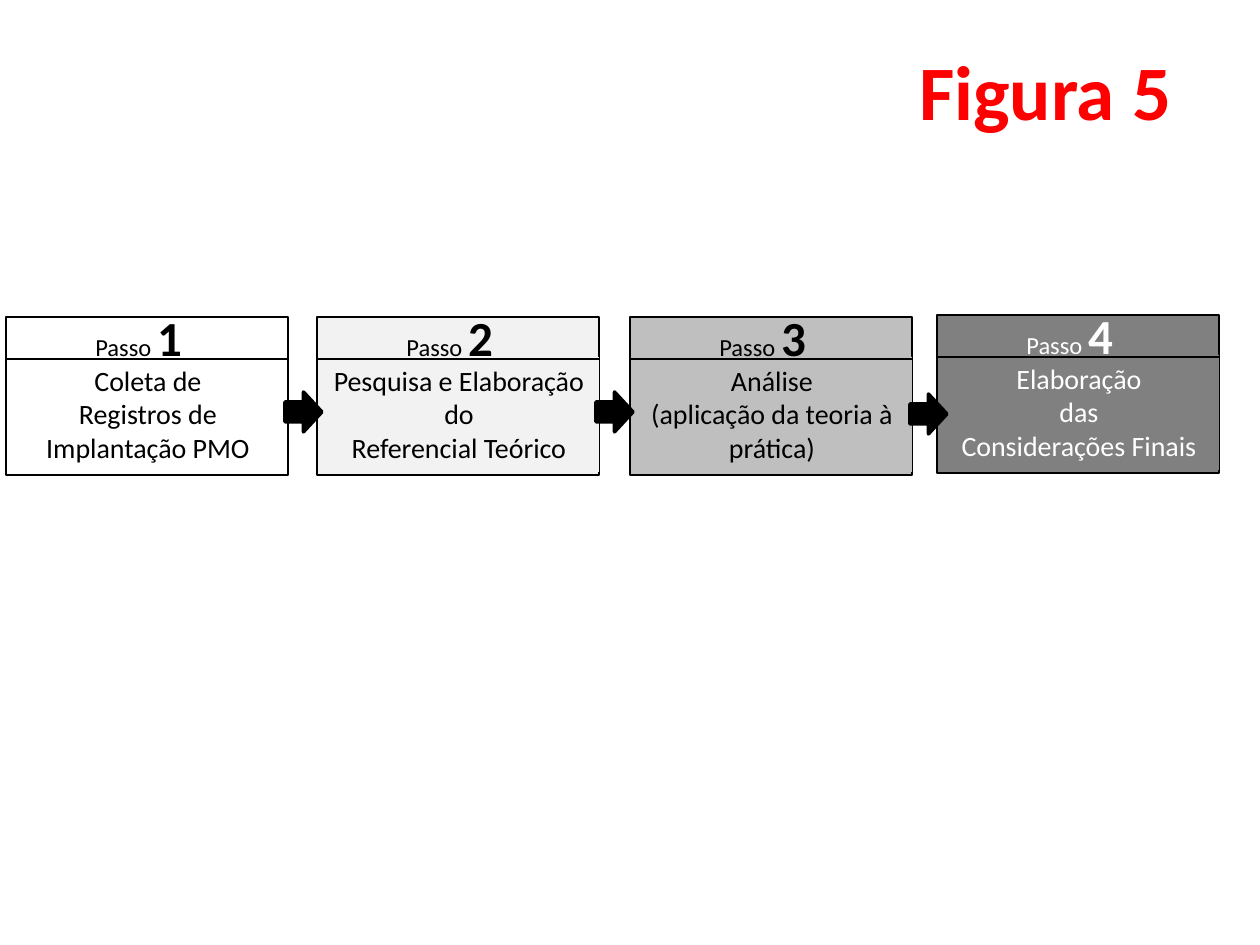
from dataclasses import dataclass
from typing import Optional

from lxml.etree import SubElement
from pptx import Presentation
from pptx.dml.color import RGBColor
from pptx.enum.shapes import MSO_CONNECTOR as Link, MSO_SHAPE as Kind
from pptx.enum.text import MSO_ANCHOR as Anchor, MSO_AUTO_SIZE as Fit, PP_ALIGN as Align
from pptx.oxml.ns import qn
from pptx.util import Emu, Pt

SCALE = 914400 / 126

BLACK = RGBColor(0x00, 0x00, 0x00)
WHITE = RGBColor(0xFF, 0xFF, 0xFF)
RED = RGBColor(0xFF, 0x00, 0x00)
PALE = RGBColor(0xF2, 0xF2, 0xF2)
SILVER = RGBColor(0xBF, 0xBF, 0xBF)
GRAY = RGBColor(0x80, 0x80, 0x80)


@dataclass
class Step:
    left: int
    top: int
    lines: list[str]
    fill: Optional[RGBColor] = None
    ink: RGBColor = BLACK


@dataclass
class Run:
    text: str
    size: int
    ink: RGBColor = BLACK
    bold: bool = False


STEPS = [
    Step(6, 317, ["Coleta de", "Registros de Implantação PMO"]),
    Step(317, 317, ["Pesquisa e Elaboração do", "Referencial Teórico"], PALE),
    Step(630, 317, ["Análise", "(aplicação da teoria à prática)"], SILVER),
    Step(937, 315, ["Elaboração", "das", "Considerações Finais"], GRAY, WHITE),
]
ARROWS = [(285, 392), (596, 392), (910, 394)]


def px(*sizes: int) -> list[Emu]:
    return [Emu(round(size * SCALE)) for size in sizes]


def paint(shape, fill: Optional[RGBColor]) -> None:
    if fill is None:
        shape.fill.background()
    else:
        shape.fill.solid()
        shape.fill.fore_color.rgb = fill


def draw_shape(shapes, kind: Kind, area: tuple, fill: Optional[RGBColor], line: int):
    shape = shapes.add_shape(kind, *px(*area))
    shape.shadow.inherit = False
    paint(shape, fill)
    shape.line.color.rgb = BLACK
    shape.line.width = Pt(line)


def draw_text(shapes, area: tuple, rows: list[list[Run]], wrap: bool = False,
              align: Align = Align.LEFT, fill: Optional[RGBColor] = None) -> None:
    box = shapes.add_textbox(*px(*area))
    paint(box, fill)
    frame = box.text_frame
    form = {"word_wrap": wrap, "auto_size": Fit.SHAPE_TO_FIT_TEXT,
            "vertical_anchor": Anchor.TOP}
    for name, value in form.items():
        setattr(frame, name, value)
    for i, row in enumerate(rows):
        para = frame.add_paragraph() if i else frame.paragraphs[0]
        para.alignment = align
        for item in row:
            run = para.add_run()
            run.text = item.text
            run.font.color.rgb = item.ink
            font = {"name": "Calibri", "size": Pt(item.size), "bold": item.bold}
            for name, value in font.items():
                setattr(run.font, name, value)


def draw_rule(shapes, left: int, top: int, width: int) -> None:
    rule = shapes.add_connector(Link.STRAIGHT, *px(left, top, left + width, top))
    rule.line.color.rgb = BLACK
    rule.line.width = Pt(1)
    SubElement(rule._element.spPr, qn("a:effectLst"))


def draw_step(shapes, num: int, step: Step) -> None:
    group = shapes.add_group_shape().shapes
    x, y = step.left, step.top
    draw_shape(group, Kind.RECTANGLE, (x, y, 282, 158), step.fill, 1)
    body = [[Run(line, 16, step.ink)] for line in step.lines]
    draw_text(group, (x + 2, y + 40, 280, 115), body, True, Align.CENTER, step.fill)
    head = [Run("Passo ", 14, step.ink), Run(str(num), 28, step.ink, True)]
    draw_text(group, (x + 77, y - 16, 129, 72), [head])
    draw_rule(group, x, y + 42, 282)


def main() -> None:
    deck = Presentation()
    deck.slide_width, deck.slide_height = px(1260, 945)
    shapes = deck.slides.add_slide(deck.slide_layouts[6]).shapes

    # Steps
    for num, step in enumerate(STEPS, 1):
        draw_step(shapes, num, step)

    # Title
    draw_text(shapes, (907, 37, 280, 106), [[Run("Figura 5", 44, RED, True)]])

    # Arrows between steps
    for left, top in ARROWS:
        draw_shape(shapes, Kind.RIGHT_ARROW, (left, top, 37, 40), BLACK, 2)

    deck.save("out.pptx")


if __name__ == "__main__":
    main()
